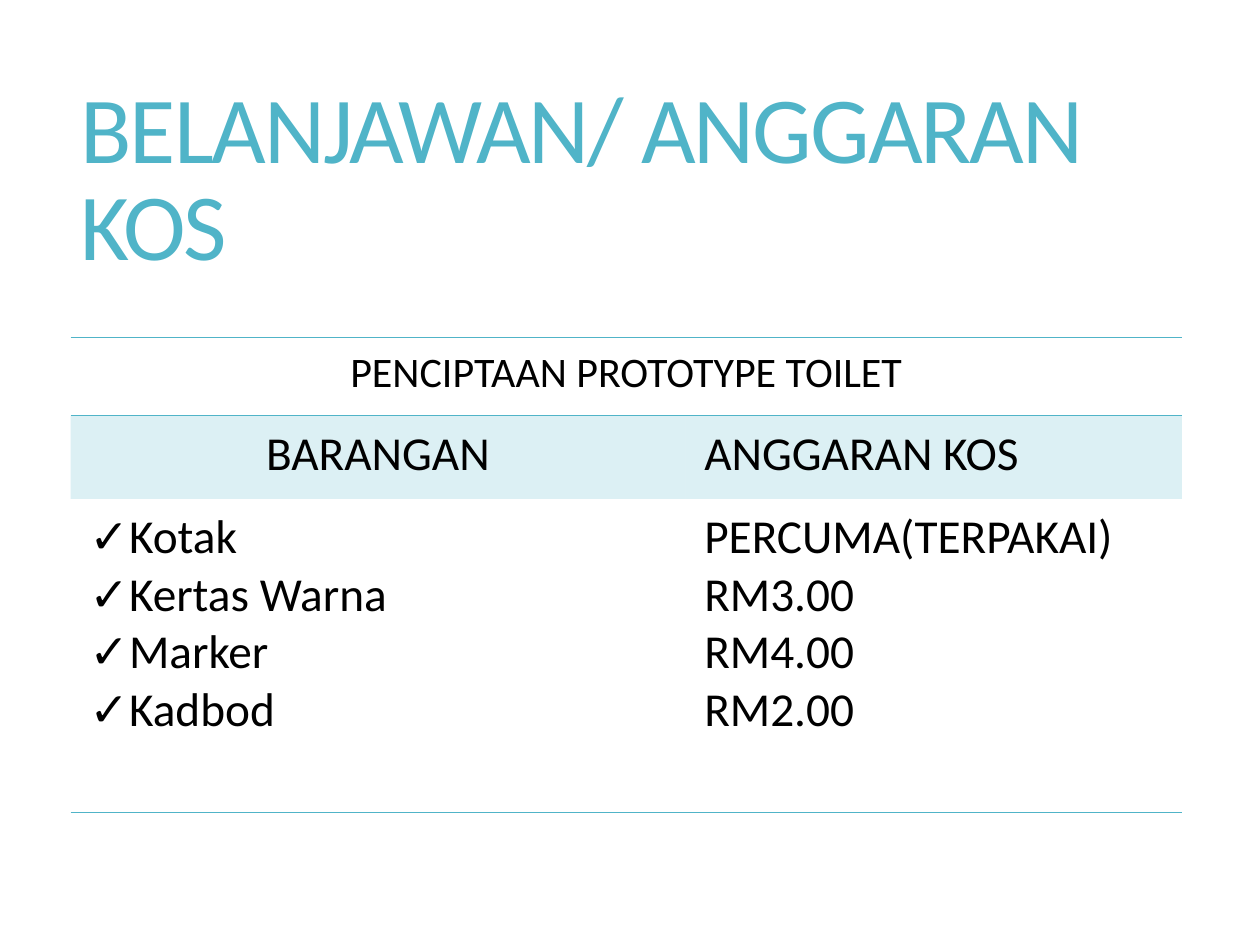
"""Build a budget slide with a title and a cost table."""
from lxml import etree
from pptx import Presentation
from pptx import util as u
from pptx.dml.color import RGBColor
from pptx.enum import text
from pptx.oxml.ns import qn

COLOURS = {"accent": "50B4C8", "ink": "000000"}
FONT = "Calibri"
TITLE = "BELANJAWAN/ ANGGARAN KOS"
LEFT, CENTRE = text.PP_ALIGN.LEFT, text.PP_ALIGN.CENTER
ITEMS = [
    ("Kotak", "PERCUMA(TERPAKAI)"),
    ("Kertas Warna", "RM3.00"),
    ("Marker", "RM4.00"),
    ("Kadbod", "RM2.00"),
]
GOODS, COSTS = zip(*ITEMS)
COLUMNS = [4.88, 3.94]
ROWS = [
    {"height": 0.62, "size": 24, "edges": "TB", "tint": False,
     "cells": [(["PENCIPTAAN PROTOTYPE TOILET"], CENTRE, None), ([], LEFT, None)]},
    {"height": 0.66, "size": 27, "edges": "T", "tint": True,
     "cells": [(["BARANGAN"], CENTRE, None), (["ANGGARAN KOS"], LEFT, None)]},
    {"height": 2.49, "size": 27, "edges": "B", "tint": False,
     "cells": [(GOODS, LEFT, "✓"), (COSTS, LEFT, None)]},
]
MARGINS = {"margin_left": 0.15, "margin_right": 0.15, "margin_top": 0.08, "margin_bottom": 0.08}


def apply(target, values):
    for name, value in values.items():
        setattr(target, name, value)


def write(para, words, size, colour):
    span = para.add_run()
    span.text = words
    apply(span.font, {"name": FONT, "size": u.Pt(size), "bold": False})
    span.font.color.rgb = RGBColor.from_string(COLOURS[colour])
    return span


def add_bullet(para, symbol):
    properties = para._p.get_or_add_pPr()
    indent = u.Inches(0.31)
    properties.set("marL", str(indent))
    properties.set("indent", str(-indent))
    etree.SubElement(properties, qn("a:buFont"), typeface=FONT)
    etree.SubElement(properties, qn("a:buChar"), char=symbol)


def set_borders(cell, edges):
    properties = cell._tc.get_or_add_tcPr()
    for position, side in enumerate("LRTB"):
        line = etree.Element(qn(f"a:ln{side}"), w=str(u.Pt(1)))
        if side in edges:
            fill = etree.SubElement(line, qn("a:solidFill"))
            etree.SubElement(fill, qn("a:srgbClr"), val=COLOURS["accent"])
        else:
            etree.SubElement(line, qn("a:noFill"))
        properties.insert(position, line)


def set_fill(cell, tint):
    if not tint:
        cell.fill.background()
        return
    cell.fill.solid()
    cell.fill.fore_color.rgb = RGBColor.from_string(COLOURS["accent"])
    colour = cell._tc.tcPr.find(f".//{qn('a:srgbClr')}")
    etree.SubElement(colour, qn("a:alpha"), val="20000")


def add_title(page):
    box = page.shapes.title
    place = {"left": 0.54, "top": 0.55, "width": 8.84, "height": 1.81}
    apply(box, {name: u.Inches(value) for name, value in place.items()})
    apply(box.text_frame, {"word_wrap": True, "auto_size": text.MSO_AUTO_SIZE.NONE,
                           "vertical_anchor": text.MSO_ANCHOR.MIDDLE})
    para = box.text_frame.paragraphs[0]
    apply(para, {"alignment": LEFT, "line_spacing": 0.85})
    span = write(para, TITLE, 54, "accent")
    span.font._element.set("spc", "-120")


def fill_cell(cell, row, content):
    lines, alignment, symbol = content
    apply(cell, {name: u.Inches(value) for name, value in MARGINS.items()})
    set_fill(cell, row["tint"])
    set_borders(cell, row["edges"])
    for index, words in enumerate(lines):
        frame = cell.text_frame
        para = frame.add_paragraph() if index else frame.paragraphs[0]
        para.alignment = alignment
        if symbol:
            add_bullet(para, symbol)
        write(para, words, row["size"], "ink")


def add_budget(page):
    height = sum(row["height"] for row in ROWS)
    table = page.shapes.add_table(
        len(ROWS), len(COLUMNS), u.Inches(0.56), u.Inches(2.68),
        u.Inches(sum(COLUMNS)), u.Inches(height)).table
    apply(table, {"first_row": False, "horz_banding": False})
    for column, width in zip(table.columns, COLUMNS):
        column.width = u.Inches(width)
    for line, row in zip(table.rows, ROWS):
        line.height = u.Inches(row["height"])
        for cell, content in zip(line.cells, row["cells"]):
            fill_cell(cell, row, content)
    table.cell(0, 0).merge(table.cell(0, 1))


def main():
    deck = Presentation()
    apply(deck, {"slide_width": u.Inches(10), "slide_height": u.Inches(7.5)})
    page = deck.slides.add_slide(deck.slide_layouts[5])
    add_title(page)
    add_budget(page)
    deck.save("out.pptx")


if __name__ == "__main__":
    main()
